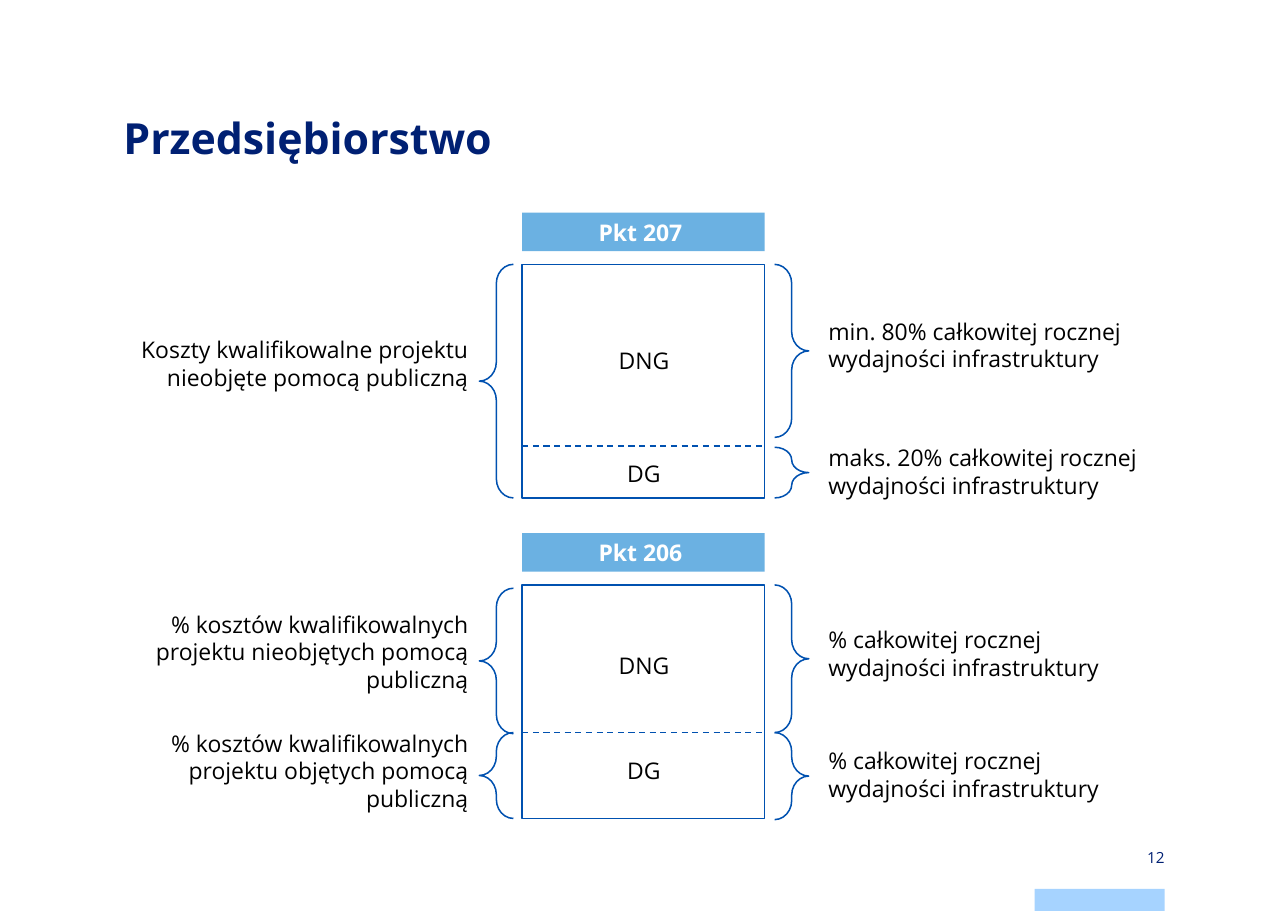
from dataclasses import dataclass

import pptx
import pptx.dml.color
import pptx.enum.dml
import pptx.enum.shapes
import pptx.enum.text
import pptx.oxml
import pptx.util

Pt = pptx.util.Pt
Align = pptx.enum.text.PP_ALIGN
Anchor = pptx.enum.text.MSO_ANCHOR
Preset = pptx.enum.shapes.MSO_SHAPE


@dataclass(frozen=True)
class Theme:
    font: str = "Open Sans"
    navy: str = "002073"
    outline: str = "0051B0"
    header: str = "6BB1E2"
    accent: str = "A6D3FF"
    white: str = "FFFFFF"
    black: str = "000000"
    title_size: float = 28
    text_size: float = 15
    number_size: float = 10
    line_width: float = 1


@dataclass(frozen=True)
class Column:
    left: float
    width: float
    align: Align


@dataclass(frozen=True)
class Label:
    column: Column
    top: float
    text: str
    lines: int = 2


@dataclass(frozen=True)
class Brace:
    top: float
    height: float
    opens_left: bool = False


@dataclass(frozen=True)
class Panel:
    heading: str
    top: float
    divider: float
    braces: tuple[Brace, ...]
    labels: tuple[Label, ...]


THEME = Theme()
COSTS = Column(80.64, 232.56, Align.RIGHT)
ACTIVITY = Column(364.32, 113.04, Align.CENTER)
CAPACITY = Column(534.24, 226.8, Align.LEFT)

BOX_LEFT, BOX_WIDTH, BOX_HEIGHT = 341.28, 158.4, 152.64
HEADING_RISE, HEADING_HEIGHT = 33.84, 25.2
BRACE_WIDTH, BRACE_LEFT, BRACE_RIGHT = 22.32, 313.2, 506.16
LINE_HEIGHT, LABEL_PADDING = 18.2, 7.2
FOOTER_LEFT, FOOTER_WIDTH, FOOTER_HEIGHT = 676.08, 84.96, 14.4

PANELS = (
    Panel(
        "Pkt 207 ", 172.8, 291.6,
        (Brace(172.8, 152.64), Brace(172.8, 113.04, True), Brace(292.32, 33.12, True)),
        (
            Label(COSTS, 216, "Koszty kwalifikowalne projektu nieobjęte pomocą publiczną"),
            Label(ACTIVITY, 223.2, "DNG", 1),
            Label(ACTIVITY, 296.64, "DG", 1),
            Label(CAPACITY, 203.76, "min. 80% całkowitej rocznej wydajności infrastruktury"),
            Label(CAPACITY, 286.56, "maks. 20% całkowitej rocznej wydajności infrastruktury"),
        ),
    ),
    Panel(
        "Pkt 206 ", 382.32, 478.8,
        (Brace(384.48, 95.04), Brace(478.8, 56.16),
         Brace(382.32, 96.48, True), Brace(478.8, 56.88, True)),
        (
            Label(COSTS, 395.28, "% kosztów kwalifikowalnych projektu nieobjętych pomocą publiczną", 3),
            Label(COSTS, 473.04, "% kosztów kwalifikowalnych projektu objętych pomocą publiczną", 3),
            Label(ACTIVITY, 422.64, "DNG", 1),
            Label(ACTIVITY, 491.04, "DG", 1),
            Label(CAPACITY, 405.36, "% całkowitej rocznej wydajności infrastruktury"),
            Label(CAPACITY, 484.56, "% całkowitej rocznej wydajności infrastruktury"),
        ),
    ),
)


def rgb(value: str) -> pptx.dml.color.RGBColor:
    return pptx.dml.color.RGBColor.from_string(value)


def write(frame, text: str, size: float, color: str, align: Align, bold: bool = False) -> None:
    frame.word_wrap = True
    frame.text = text
    paragraph = frame.paragraphs[0]
    paragraph.alignment = align
    font = paragraph.runs[0].font
    font.name, font.size, font.bold = THEME.font, Pt(size), bold
    font.color.rgb = rgb(color)


def set_insets(frame, horizontal: float, vertical: float) -> None:
    frame.margin_left = frame.margin_right = Pt(horizontal)
    frame.margin_top = frame.margin_bottom = Pt(vertical)


def add_preset(slide, preset: Preset, left: float, top: float, width: float, height: float,
               fill: str | None = None):
    shape = slide.shapes.add_shape(preset, Pt(left), Pt(top), Pt(width), Pt(height))
    shape.shadow.inherit = False
    if fill:
        shape.fill.solid()
        shape.fill.fore_color.rgb = rgb(fill)
        shape.line.fill.background()
    else:
        shape.fill.background()
        outline(shape.line)
    return shape


def outline(line) -> None:
    line.color.rgb = rgb(THEME.outline)
    line.width = Pt(THEME.line_width)


def add_brace(slide, brace: Brace) -> None:
    left = BRACE_RIGHT if brace.opens_left else BRACE_LEFT
    shape = add_preset(slide, Preset.LEFT_BRACE, left, brace.top, BRACE_WIDTH, brace.height)
    shape.adjustments[0] = 0.56
    shape.adjustments[1] = 0.5
    shape.rotation = 180 if brace.opens_left else 0


def add_label(slide, label: Label) -> None:
    height = LABEL_PADDING + label.lines * LINE_HEIGHT
    box = slide.shapes.add_textbox(
        Pt(label.column.left), Pt(label.top), Pt(label.column.width), Pt(height))
    write(box.text_frame, label.text, THEME.text_size, THEME.black, label.column.align)
    box.text_frame.auto_size = pptx.enum.text.MSO_AUTO_SIZE.SHAPE_TO_FIT_TEXT


def add_divider(slide, top: float) -> None:
    divider = slide.shapes.add_connector(
        pptx.enum.shapes.MSO_CONNECTOR.STRAIGHT,
        Pt(BOX_LEFT), Pt(top), Pt(BOX_LEFT + BOX_WIDTH), Pt(top))
    outline(divider.line)
    divider.line.dash_style = pptx.enum.dml.MSO_LINE.DASH
    properties = divider._element.spPr
    properties.append(properties.makeelement(pptx.oxml.ns.qn("a:effectLst"), {}))


def add_panel(slide, panel: Panel) -> None:
    add_preset(slide, Preset.RECTANGLE, BOX_LEFT, panel.top, BOX_WIDTH, BOX_HEIGHT)
    heading = add_preset(slide, Preset.RECTANGLE, BOX_LEFT, panel.top - HEADING_RISE,
                         BOX_WIDTH, HEADING_HEIGHT, THEME.header)
    write(heading.text_frame, panel.heading, THEME.text_size, THEME.white, Align.CENTER, True)
    add_divider(slide, panel.divider)
    for brace in panel.braces:
        add_brace(slide, brace)
    for label in panel.labels:
        add_label(slide, label)


def add_title(slide) -> None:
    title = slide.shapes.title
    title.left, title.top, title.width, title.height = Pt(80.64), Pt(70.56), Pt(680.4), Pt(84.96)
    frame = title.text_frame
    write(frame, "Przedsiębiorstwo", THEME.title_size, THEME.navy, Align.LEFT, True)
    frame.paragraphs[0].line_spacing = Pt(36)
    frame.vertical_anchor = Anchor.TOP
    set_insets(frame, 0, 0)


def add_footer(slide) -> None:
    add_preset(slide, Preset.RECTANGLE, FOOTER_LEFT, 581.04, FOOTER_WIDTH, FOOTER_HEIGHT, THEME.accent)
    number = slide.shapes.add_textbox(
        Pt(FOOTER_LEFT), Pt(552.96), Pt(FOOTER_WIDTH), Pt(FOOTER_HEIGHT))
    write(number.text_frame, "12", THEME.number_size, THEME.navy, Align.RIGHT)
    number.text_frame.vertical_anchor = Anchor.MIDDLE
    set_insets(number.text_frame, 0, 5.76)


def main() -> None:
    deck = pptx.Presentation()
    deck.slide_width, deck.slide_height = Pt(841.68), Pt(595.44)
    slide = deck.slides.add_slide(deck.slide_layouts[5])
    add_title(slide)
    for panel in PANELS:
        add_panel(slide, panel)
    add_footer(slide)
    deck.save("out.pptx")


if __name__ == "__main__":
    main()
